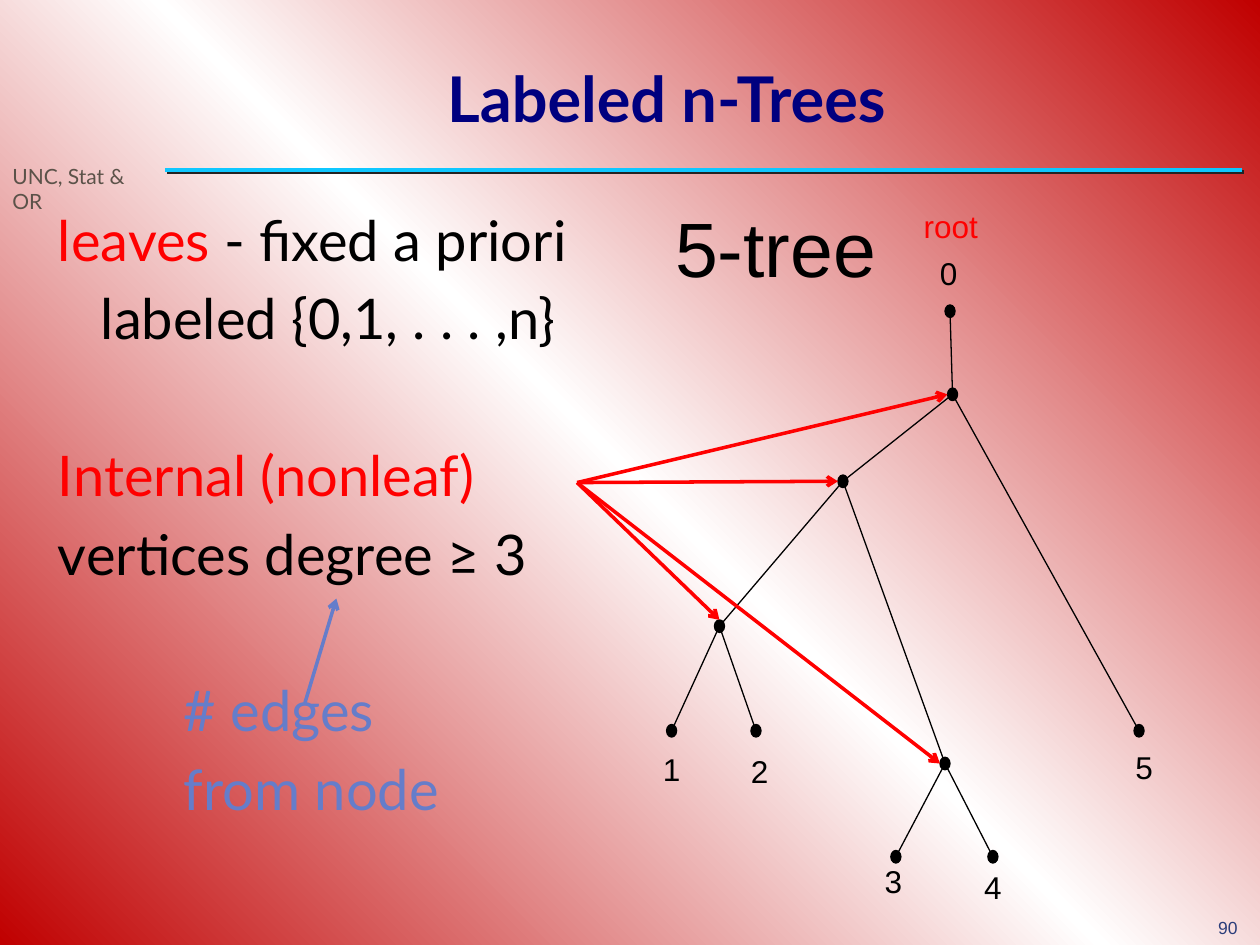
from copy import deepcopy
from dataclasses import dataclass

from lxml.etree import SubElement
from pptx import Presentation
from pptx.dml.color import RGBColor
from pptx.enum.shapes import MSO_CONNECTOR, MSO_SHAPE
from pptx.enum.text import MSO_ANCHOR, MSO_AUTO_SIZE, PP_ALIGN
from pptx.oxml.ns import qn
from pptx.util import Inches, Pt

COLS, ROWS = 100, 75  # slide grid
CELL = Inches(0.1)


class Theme:
    heading, sans = "Lato", "Arial"
    navy, cyan, shadow = "00007F", "0FC7FF", "232323"
    red, black, blue = "FF0000", "000000", "657DCA"
    footer, number = "5B5249", "2A3D7A"
    deep, white = "C00000", "FFFFFF"
    title, body, name, label, small, tiny = 36, 32, 44, 18, 12, 10


@dataclass
class Box:
    """A region of the slide, in grid columns and rows."""
    x: float
    y: float
    w: float
    h: float

    def sub(self, x, y, w, h):
        return Box(self.x + x, self.y + y, w, h)

    def point(self, x, y):
        return self.x + x, self.y + y

    def emu(self):
        return [round(v * CELL) for v in (self.x, self.y, self.w, self.h)]


def add_run(p, text, font=Theme.sans, size=Theme.label, color=Theme.black, bold=False):
    r = p.add_run()
    r.text = text
    r.font.name, r.font.size, r.font.bold = font, Pt(size), bold
    r.font.color.rgb = RGBColor.from_string(color)


def add_label(s, box, text, align=PP_ALIGN.LEFT, anchor=MSO_ANCHOR.TOP, wrap=True, **fmt):
    tf = s.shapes.add_textbox(*box.emu()).text_frame
    tf.word_wrap, tf.vertical_anchor = wrap, anchor
    p = tf.paragraphs[0]
    p.alignment = align
    add_run(p, text, **fmt)
    return p


def add_line(s, start, end, color, width, arrow=False):
    line = s.shapes.add_connector(MSO_CONNECTOR.STRAIGHT,
                                  *(round(v * CELL) for v in (*start, *end)))
    line.line.color.rgb = RGBColor.from_string(color)
    line.line.width = Pt(width)
    if arrow:
        SubElement(line.line._get_or_add_ln(), qn("a:tailEnd"), type="arrow")
    return SubElement(line._element.spPr, qn("a:effectLst"))


def paint_background(s):
    fill = s.background.fill
    fill.gradient()
    fill.gradient_angle = 225
    stops = s.element.xpath(".//a:gsLst")[0]
    stops.insert(1, deepcopy(stops[0]))
    for stop, pos, color in zip(fill.gradient_stops, (0, 0.5, 1),
                                (Theme.deep, Theme.white, Theme.deep)):
        stop.position = pos
        stop.color.rgb = RGBColor.from_string(color)


def add_frame(s, box):
    """Rule under the title, department name and page number."""
    effects = add_line(s, box.point(13.1, 13.5), box.point(98.6, 13.5), Theme.cyan, 2.25)
    shadow = SubElement(effects, qn("a:outerShdw"), dist=str(Pt(1.4)), dir="2700000")
    SubElement(shadow, qn("a:srgbClr"), val=Theme.shadow)
    add_label(s, box.sub(0, 12.5, 13.5, 3), "UNC, Stat & OR",
              font=Theme.heading, size=Theme.small, color=Theme.footer)
    add_label(s, box.sub(95.7, 72.5, 3.7, 2.5), "90", wrap=False,
              size=Theme.tiny, color=Theme.number).line_spacing = 0.9


def add_title(s, box, text):
    title = s.shapes.title
    title.left, title.top, title.width, title.height = box.emu()
    tf = title.text_frame
    tf.auto_size, tf.vertical_anchor = MSO_AUTO_SIZE.NONE, MSO_ANCHOR.MIDDLE
    p = tf.paragraphs[0]
    p.alignment = PP_ALIGN.CENTER
    add_run(p, text, font=Theme.heading, size=Theme.title, color=Theme.navy, bold=True)


def add_body(s, box):
    body = s.placeholders[1]
    body.left, body.top, body.width, body.height = box.emu()
    tf = body.text_frame
    tf.auto_size, tf.word_wrap = MSO_AUTO_SIZE.NONE, True
    near, far = 0.2 * Theme.body, 1.6 * Theme.body
    # space before, indent in columns, runs
    lines = [
        (0, 0, [("leaves ", Theme.red), ("- fixed a priori", Theme.black)]),
        (near, 3.4, [("labeled {0,1, . . . ,n}", Theme.black)]),
        (far, 0, [("Internal (nonleaf)", Theme.red)]),
        (near, 0, [("vertices degree ≥ 3", Theme.black)]),
        (far, 10, [("# edges", Theme.blue)]),
        (near, 10, [("from node", Theme.blue)]),
    ]
    for i, (space, indent, runs) in enumerate(lines):
        p = tf.add_paragraph() if i else tf.paragraphs[0]
        pPr = p._p.get_or_add_pPr()
        pPr.set("marL", str(round(indent * CELL)))
        pPr.set("indent", "0")
        SubElement(pPr, qn("a:buNone"))
        p.space_before = Pt(space)
        for text, color in runs:
            add_run(p, text, font=Theme.heading, size=Theme.body, color=color)
    # Pointer from the remark to the word "degree"
    add_line(s, box.point(20.6, 40), box.point(23.1, 31.7), Theme.blue, 2, arrow=True)


def add_tree(s, box):
    nodes = {  # centres
        "root": (25.4, 9.7), "top": (25.6, 16.3), "mid": (16.9, 23.2),
        "left": (7.1, 34.7), "right": (25, 45.6),
        "1": (3.3, 43), "2": (10, 43), "3": (21.1, 53), "4": (28.8, 53), "5": (40.4, 43),
    }
    children = {"root": ["top"], "top": ["mid", "5"], "mid": ["left", "right"],
                "left": ["1", "2"], "right": ["3", "4"]}
    labels = {"0": (25.3, 6.7), "1": (3.3, 46), "2": (10.3, 46.2),
              "3": (20.9, 54.9), "4": (28.8, 55.4), "5": (40.8, 45.9)}
    # Edges
    for parent, kids in children.items():
        for kid in kids:
            add_line(s, box.point(*nodes[parent]), box.point(*nodes[kid]), Theme.black, 0.75)
    # Vertices
    for x, y in nodes.values():
        dot = s.shapes.add_shape(MSO_SHAPE.OVAL, *box.sub(x - 0.4, y - 0.5, 0.8, 1).emu())
        dot.shadow.inherit = False
        dot.fill.solid()
        dot.fill.fore_color.rgb = RGBColor.from_string(Theme.black)
        dot.line.color.rgb = RGBColor.from_string(Theme.black)
        dot.line.width = Pt(0.75)
    # Leaf labels and names
    for text, (x, y) in labels.items():
        add_label(s, box.sub(x - 2, y - 2, 4, 4), text,
                  align=PP_ALIGN.CENTER, anchor=MSO_ANCHOR.MIDDLE)
    add_label(s, box.sub(15.4, 0.9, 20.1, 4), "root", align=PP_ALIGN.CENTER, color=Theme.red)
    add_label(s, box.sub(2.6, 0.4, 19.8, 8.4), "5-tree", wrap=False, size=Theme.name)
    # Arrows to the internal vertices, ending on the rim of each dot
    for name, (dx, dy) in {"mid": (-0.4, 0), "right": (-0.4, 0),
                           "top": (-0.4, 0), "left": (0, -0.5)}.items():
        x, y = nodes[name]
        add_line(s, box.point(-4.2, 23.3), box.point(x + dx, y + dy), Theme.red, 2, arrow=True)


def main():
    prs = Presentation()
    prs.slide_width, prs.slide_height = COLS * CELL, ROWS * CELL
    s = prs.slides.add_slide(prs.slide_layouts[1])
    paint_background(s)
    add_frame(s, Box(0, 0, COLS, ROWS))
    add_title(s, Box(18.3, 5, 69.2, 5.4), "Labeled n-Trees")
    add_body(s, Box(3.6, 15.8, 48.9, 55.8))
    add_tree(s, Box(50, 15, 50, 60))
    prs.save("out.pptx")


if __name__ == "__main__":
    main()
